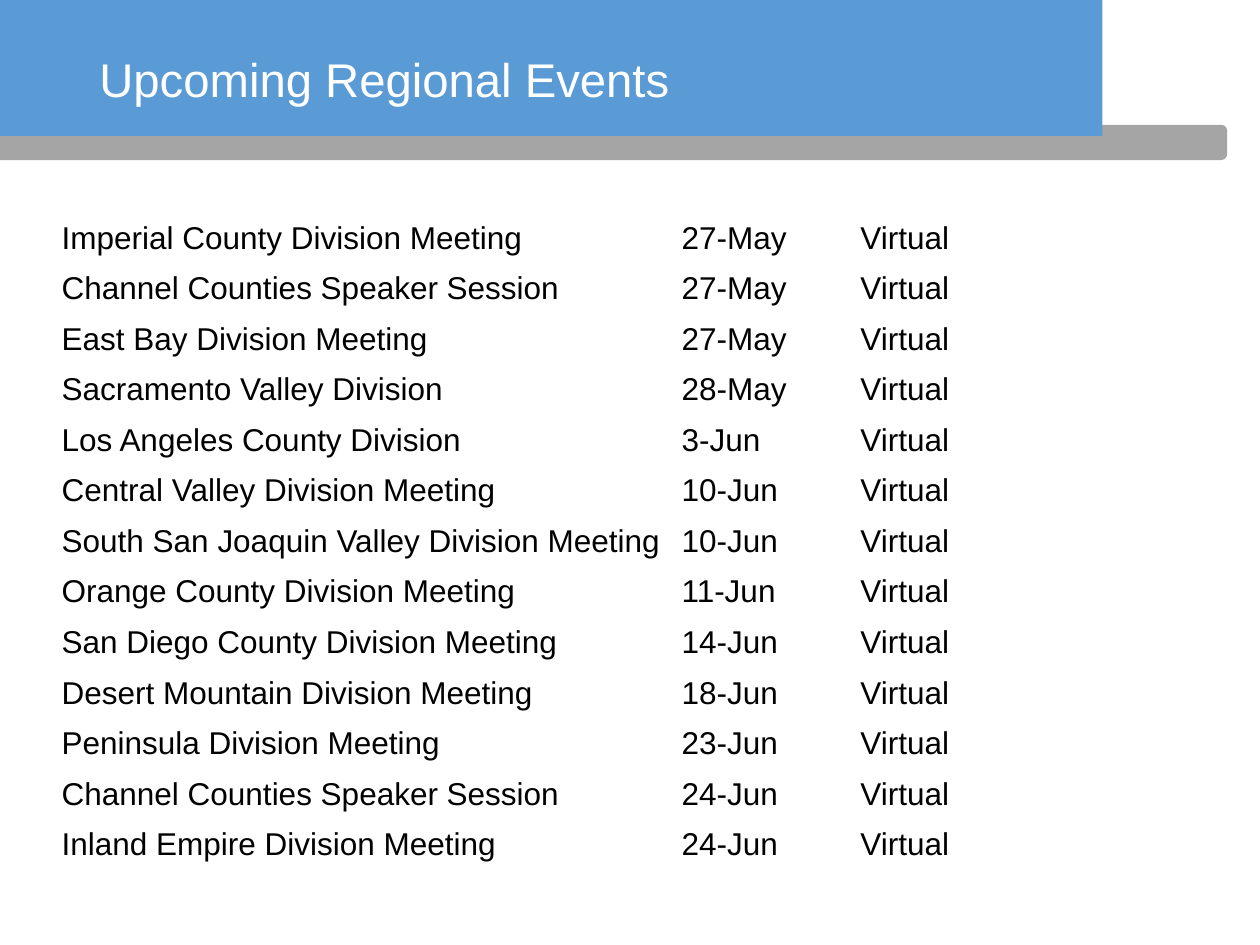
from pptx import Presentation
from pptx.dml.color import RGBColor
from pptx.enum.shapes import MSO_SHAPE
from pptx.enum.text import MSO_ANCHOR
from pptx.util import Inches, Pt

BLUE = RGBColor(0x5B, 0x9B, 0xD5)
GRAY = RGBColor(0xA5, 0xA5, 0xA5)
WHITE = RGBColor(0xFF, 0xFF, 0xFF)
BLACK = RGBColor(0, 0, 0)

EVENTS = [
    ("Imperial County Division Meeting", "27-May"),
    ("Channel Counties Speaker Session", "27-May"),
    ("East Bay Division Meeting", "27-May"),
    ("Sacramento Valley Division", "28-May"),
    ("Los Angeles County Division", "3-Jun"),
    ("Central Valley Division Meeting", "10-Jun"),
    ("South San Joaquin Valley Division Meeting", "10-Jun"),
    ("Orange County Division Meeting", "11-Jun"),
    ("San Diego County Division Meeting", "14-Jun"),
    ("Desert Mountain Division Meeting", "18-Jun"),
    ("Peninsula Division Meeting", "23-Jun"),
    ("Channel Counties Speaker Session", "24-Jun"),
    ("Inland Empire Division Meeting", "24-Jun"),
]
PLACE = "Virtual"
WIDTHS = [4.92, 1.42, 2.5]


def add_run(para, text, size, color):
    run = para.add_run()
    run.text = text
    run.font.name = "Arial"
    run.font.size = Pt(size)
    run.font.color.rgb = color


prs = Presentation()
prs.slide_width = Inches(10)
prs.slide_height = Inches(7.5)
slide = prs.slides.add_slide(prs.slide_layouts[6])

# Header bands: gray bar behind, blue block in front
for kind, color, box in [
    (MSO_SHAPE.ROUNDED_RECTANGLE, GRAY, (-0.19, 0.99, 9.93, 0.28)),
    (MSO_SHAPE.RECTANGLE, BLUE, (0, -0.02, 8.75, 1.1)),
]:
    band = slide.shapes.add_shape(kind, *[Inches(n) for n in box])
    band.shadow.inherit = False
    band.fill.solid()
    band.fill.fore_color.rgb = color
    band.line.fill.background()

# Title
title = slide.shapes.add_textbox(
    Inches(0.69), Inches(0.27), Inches(8.62), Inches(0.76))
frame = title.text_frame
frame.word_wrap = True
frame.vertical_anchor = MSO_ANCHOR.MIDDLE
frame.paragraphs[0].line_spacing = 0.9
add_run(frame.paragraphs[0], "Upcoming Regional Events", 27, WHITE)

# Event table: name, date, place
table = slide.shapes.add_table(
    len(EVENTS), len(WIDTHS), Inches(0.42), Inches(1.75),
    Inches(sum(WIDTHS)), Inches(5.22)).table
table.first_row = False
table.horz_banding = False
for col, width in zip(table.columns, WIDTHS):
    col.width = Inches(width)

for row, event in zip(table.rows, EVENTS):
    for cell, text in zip(row.cells, (*event, PLACE)):
        cell.fill.background()
        cell.margin_left = cell.margin_right = Inches(0.07)
        cell.margin_top = cell.margin_bottom = 0
        add_run(cell.text_frame.paragraphs[0], text, 18, BLACK)

prs.save("out.pptx")
